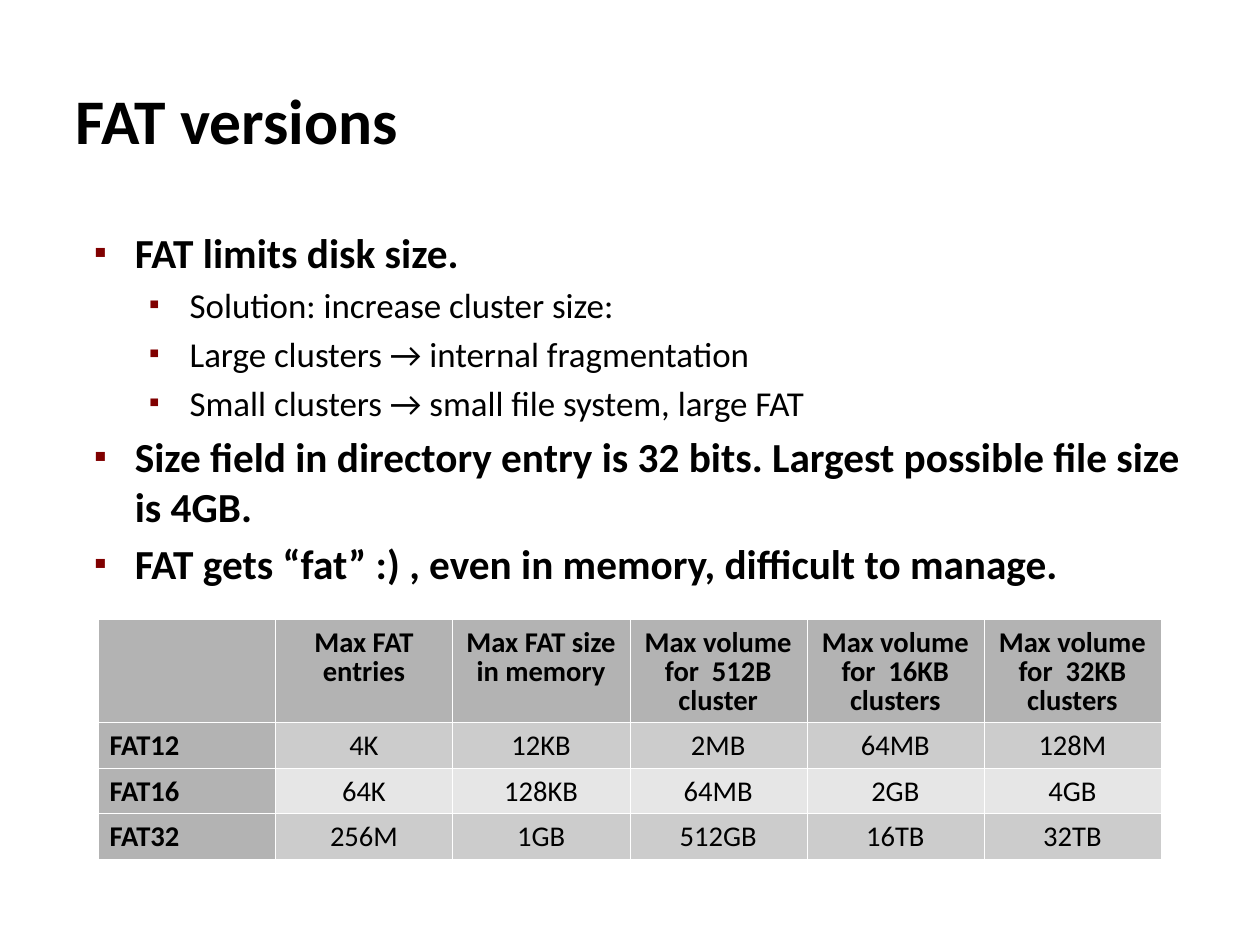
import dataclasses

import lxml.etree
import pptx
import pptx.dml.color
import pptx.enum.text
import pptx.oxml.ns
import pptx.util

ALIGN = pptx.enum.text.PP_ALIGN


@dataclasses.dataclass(frozen=True)
class Theme:
    font: str = "Calibri"
    text: str = "000000"
    bullet: str = "800000"
    border: str = "FFFFFF"
    header: str = "B3B3B3"
    bands: tuple = ("CCCCCC", "E6E6E6")
    title_size: int = 40
    body_sizes: tuple = (26, 22)
    table_size: int = 18
    border_width: float = 0.06
    line_spacing: float = 0.83
    body_insets: tuple = (0.11, 0.06, 0.11, 0.06)
    title_insets: tuple = (0.11, 0.1, 0.11, 0.06)
    cell_insets: tuple = (0.1, 0.09, 0.1, 0.05)
    bullet_indents: tuple = (0.47, 0.95)
    bullet_hang: float = 0.35


def add_xml(parent, tag, **attrs):
    return lxml.etree.SubElement(parent, pptx.oxml.ns.qn(tag), attrs)


def set_margins(obj, insets):
    for side, inset in zip(("left", "top", "right", "bottom"), insets):
        setattr(obj, f"margin_{side}", pptx.util.Inches(inset))


class SlideBuilder:
    def __init__(self, prs, theme):
        self.theme = theme
        self.width, self.height = prs.slide_width, prs.slide_height
        self.slide = prs.slides.add_slide(prs.slide_layouts[1])

    def x(self, percent):
        return round(self.width * percent / 100)

    def y(self, percent):
        return round(self.height * percent / 100)

    def place(self, sp, left, top, width, height, insets):
        sp.left, sp.top = self.x(left), self.y(top)
        sp.width, sp.height = self.x(width), self.y(height)
        tf = sp.text_frame
        tf.word_wrap = True
        tf.auto_size = pptx.enum.text.MSO_AUTO_SIZE.NONE
        set_margins(tf, insets)
        return tf

    def style(self, p, size, bold, align=ALIGN.LEFT):
        p.alignment = align
        for r in p.runs:
            r.font.name = self.theme.font
            r.font.size = pptx.util.Pt(size)
            r.font.bold = bold
            r.font.color.rgb = pptx.dml.color.RGBColor.from_string(self.theme.text)

    def title(self, text, *box):
        tf = self.place(self.slide.shapes.title, *box, self.theme.title_insets)
        tf.vertical_anchor = pptx.enum.text.MSO_ANCHOR.MIDDLE
        tf.text = text
        self.style(tf.paragraphs[0], self.theme.title_size, True)

    def bullet(self, p, level):
        pPr = p._p.get_or_add_pPr()
        pPr.set("marL", str(pptx.util.Inches(self.theme.bullet_indents[level])))
        pPr.set("indent", str(-pptx.util.Inches(self.theme.bullet_hang)))
        add_xml(add_xml(pPr, "a:buClr"), "a:srgbClr", val=self.theme.bullet)
        add_xml(pPr, "a:buSzPct", val="45000")
        add_xml(pPr, "a:buChar", char="■")

    def bullets(self, items, *box):
        tf = self.place(self.slide.placeholders[1], *box, self.theme.body_insets)
        tf.text = "\n".join(text for _, text in items)
        for p, (level, _) in zip(tf.paragraphs, items):
            p.level = level
            self.style(p, self.theme.body_sizes[level], level == 0)
            self.bullet(p, level)

    def borders(self, cell):
        tcPr = cell._tc.get_or_add_tcPr()
        for i, tag in enumerate(("a:lnL", "a:lnR", "a:lnT", "a:lnB")):
            ln = add_xml(tcPr, tag, w=str(pptx.util.Pt(self.theme.border_width)))
            add_xml(add_xml(ln, "a:solidFill"), "a:srgbClr", val=self.theme.border)
            tcPr.insert(i, ln)

    def cell(self, cell, text, fill, bold, align):
        cell.text = text
        set_margins(cell, self.theme.cell_insets)
        cell.fill.solid()
        cell.fill.fore_color.rgb = pptx.dml.color.RGBColor.from_string(fill)
        self.borders(cell)
        p = cell.text_frame.paragraphs[0]
        p.line_spacing = self.theme.line_spacing
        self.style(p, self.theme.table_size, bold, align)

    def table(self, rows, left, top, width, header_height, row_height):
        height = header_height + row_height * (len(rows) - 1)
        table = self.slide.shapes.add_table(
            len(rows), len(rows[0]),
            self.x(left), self.y(top), self.x(width), self.y(height),
        ).table
        table.first_row = table.horz_banding = False
        for i, row in enumerate(rows):
            table.rows[i].height = self.y(row_height if i else header_height)
            for j, text in enumerate(row):
                heading = i == 0 or j == 0
                fill = self.theme.header if heading else self.theme.bands[(i - 1) % 2]
                align = ALIGN.CENTER if j else ALIGN.LEFT
                self.cell(table.cell(i, j), text, fill, heading, align)


def main():
    prs = pptx.Presentation()
    prs.slide_width = pptx.util.Cm(28)
    prs.slide_height = pptx.util.Cm(21)
    slide = SlideBuilder(prs, Theme())
    slide.title("FAT versions", 5, 4, 90, 16.7)
    slide.bullets(
        [
            (0, "FAT limits disk size."),
            (1, "Solution: increase cluster size:"),
            (1, "Large clusters → internal fragmentation"),
            (1, "Small clusters → small file system, large FAT"),
            (0, "Size field in directory entry is 32 bits. Largest possible file size is 4GB."),
            (0, "FAT gets “fat” :) , even in memory, difficult to manage."),
        ],
        5.44, 23.3, 89.56, 42.2,
    )
    slide.table(
        [
            ("", "Max FAT entries", "Max FAT size in memory",
             "Max volume for  512B cluster", "Max volume for  16KB clusters",
             "Max volume for  32KB clusters"),
            ("FAT12", "4K", "12KB", "2MB", "64MB", "128M"),
            ("FAT16", "64K", "128KB", "64MB", "2GB", "4GB"),
            ("FAT32", "256M", "1GB", "512GB", "16TB", "32TB"),
        ],
        7.8, 65.54, 84.35, 10.84, 4.82,
    )
    prs.save("out.pptx")


if __name__ == "__main__":
    main()
